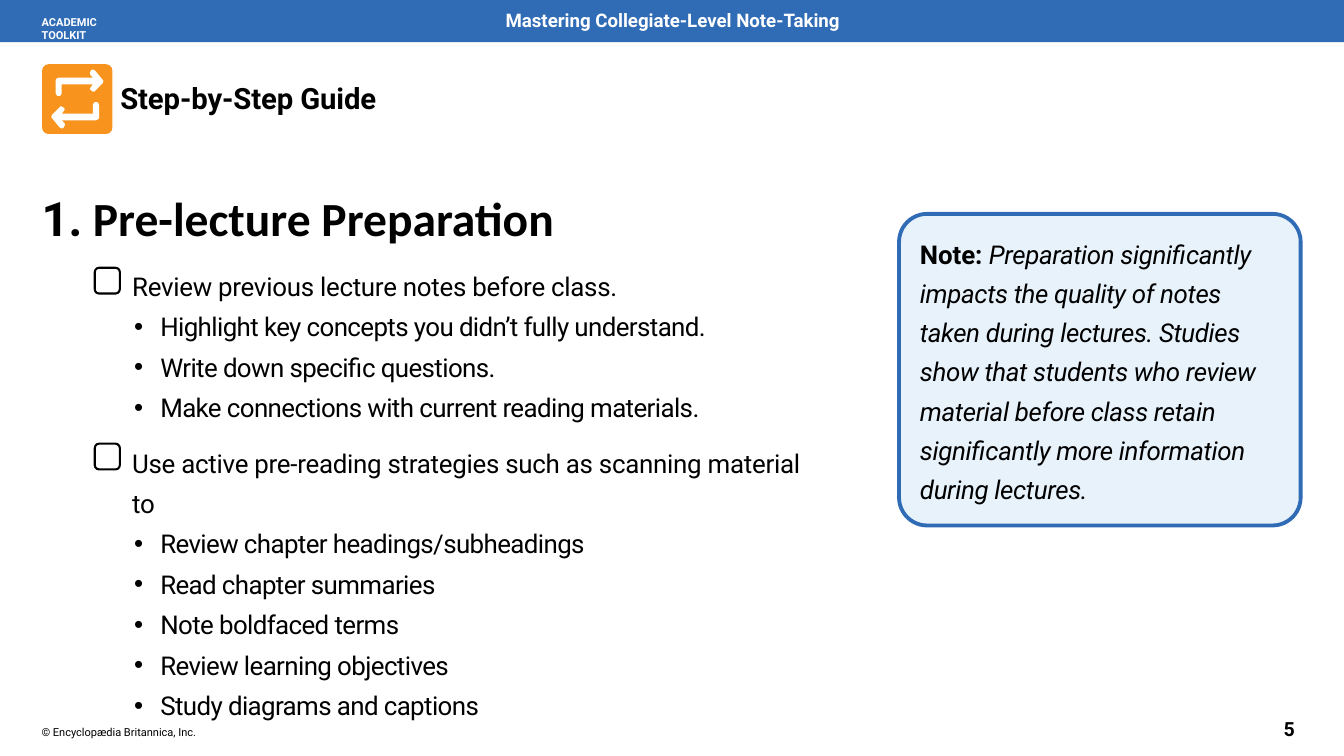
from dataclasses import dataclass

import lxml.etree
import pptx
import pptx.dml.color
import pptx.enum.shapes
import pptx.enum.text
import pptx.oxml.ns
import pptx.shapes.autoshape
import pptx.slide
import pptx.text.text
import pptx.util

Cm = pptx.util.Cm
Pt = pptx.util.Pt
Align = pptx.enum.text.PP_ALIGN
Preset = pptx.enum.shapes.MSO_SHAPE

BLUE, PALE_BLUE, ORANGE = "306CB5", "E8F2FB", "F8941D"
BLACK, WHITE = "000000", "FFFFFF"
MARGIN = 1.73
BODY_SIZE = 30.5

ICON_UNIT = Cm(2.54) / 100
RIGHT_ARROW = [
    (169, 132), (156, 116), (153, 114), (151, 114), (149, 115), (148, 117),
    (147, 119), (147, 121), (148, 123), (152, 127), (96, 127), (94, 128),
    (92, 129), (91, 131), (91, 152), (92, 155), (94, 157), (98, 157),
    (100, 155), (101, 152), (101, 138), (152, 138), (149, 142), (147, 145),
    (148, 147), (152, 150), (154, 150), (168, 136), (169, 133),
]
LEFT_ARROW = [(253 - x, 324 - y) for x, y in RIGHT_ARROW]


@dataclass
class Area:
    left: float
    top: float
    width: float
    height: float

    def lengths(self) -> list[int]:
        return [Cm(n) for n in (self.left, self.top, self.width, self.height)]


@dataclass
class Span:
    text: str
    size: float
    color: str = BLACK
    bold: bool = False
    italic: bool = False
    font: str = "Roboto"
    spacing: float = 0


@dataclass
class Line:
    spans: list[Span]
    margin: float = 0
    indent: float = 0
    line_spacing: float | int = 1.0
    before: float = 0
    bullet: str = ""
    align: Align = Align.LEFT


@dataclass
class Label:
    area: Area
    line: Line
    inset: tuple[float, float] = (0, 0.05)


@dataclass
class Panel:
    preset: Preset
    area: Area
    fill: str = ""
    border: str = ""
    weight: float = 0
    corner: float = 0


def color(value: str) -> pptx.dml.color.RGBColor:
    return pptx.dml.color.RGBColor.from_string(value)


def add_mark(paragraph: pptx.text.text._Paragraph, line: Line) -> None:
    properties = paragraph._p.get_or_add_pPr()
    properties.set("marL", str(Cm(line.margin)))
    properties.set("indent", str(Cm(line.indent)))
    qn = pptx.oxml.ns.qn
    if line.bullet:
        lxml.etree.SubElement(properties, qn("a:buChar")).set("char", line.bullet)
    else:
        lxml.etree.SubElement(properties, qn("a:buNone"))


def write_text(box: pptx.shapes.autoshape.Shape, area: Area, lines: list[Line],
               inset: tuple[float, float]) -> None:
    box.left, box.top, box.width, box.height = area.lengths()
    frame = box.text_frame
    frame.word_wrap = True
    frame.auto_size = pptx.enum.text.MSO_AUTO_SIZE.NONE
    frame.vertical_anchor = pptx.enum.text.MSO_ANCHOR.TOP
    frame.margin_left = frame.margin_right = Cm(inset[0])
    frame.margin_top, frame.margin_bottom = Cm(inset[1]), 0
    for index, line in enumerate(lines):
        paragraph = frame.add_paragraph() if index else frame.paragraphs[0]
        add_mark(paragraph, line)
        paragraph.alignment = line.align
        paragraph.line_spacing = line.line_spacing
        paragraph.space_before = Pt(line.before)
        paragraph.space_after = Pt(0)
        for span in line.spans:
            run = paragraph.add_run()
            run.text = span.text
            run.font.size, run.font.name = Pt(span.size), span.font
            run.font.bold, run.font.italic = span.bold, span.italic
            run.font.color.rgb = color(span.color)
            run._r.get_or_add_rPr().set("spc", str(round(span.spacing * 100)))


def paint(shape: pptx.shapes.autoshape.Shape, fill: str, border: str = "",
          weight: float = 0) -> None:
    shape.shadow.inherit = False
    if fill:
        shape.fill.solid()
        shape.fill.fore_color.rgb = color(fill)
    else:
        shape.fill.background()
    if border:
        shape.line.color.rgb = color(border)
        shape.line.width = Pt(weight)
    else:
        shape.line.fill.background()


def add_panel(page: pptx.slide.Slide, panel: Panel) -> None:
    shape = page.shapes.add_shape(panel.preset, *panel.area.lengths())
    if panel.corner:
        shape.adjustments[0] = panel.corner
    paint(shape, panel.fill, panel.border, panel.weight)


def add_arrows(page: pptx.slide.Slide) -> None:
    builder = page.shapes.build_freeform(*RIGHT_ARROW[0], scale=ICON_UNIT)
    builder.add_line_segments(RIGHT_ARROW[1:])
    builder.move_to(*LEFT_ARROW[0])
    builder.add_line_segments(LEFT_ARROW[1:])
    paint(builder.convert_to_shape(), WHITE)


def step(text: str) -> Line:
    return Line([Span(text, BODY_SIZE, spacing=-0.3)], 3.76, 0, 1.3, 18)


def point(text: str) -> Line:
    return Line([Span(text, BODY_SIZE, spacing=-0.7)], 4.93, -1.09, 1.3, bullet="•")


PANELS = [
    Panel(Preset.RECTANGLE, Area(0, 0, 55.85, 1.75), BLUE),
    Panel(Preset.ROUNDED_RECTANGLE, Area(37.36, 8.89, 16.69, 12.95), PALE_BLUE, BLUE, 4.5, 0.09),
    Panel(Preset.ROUNDED_RECTANGLE, Area(1.75, 2.67, 2.92, 2.9), ORANGE, corner=0.09),
] + [
    Panel(Preset.ROUNDED_RECTANGLE, Area(3.94, top, 1.04, 1.07), "", BLACK, 2.47, 0.17)
    for top in (11.13, 18.44)
]

LABELS = [
    Label(Area(17.37, 0.33, 21.16, 0.99),
          Line([Span("Mastering Collegiate-Level Note-Taking", 22, WHITE, True)], align=Align.CENTER)),
    Label(Area(MARGIN, 0.6, 4.14, 0.64), Line([Span("ACADEMIC TOOLKIT", 13, WHITE, True)])),
    Label(Area(53.34, 29.77, 0.94, 1.04), Line([Span("5", 23, bold=True)])),
    Label(Area(MARGIN, 30.12, 6.53, 0.64), Line([Span("© Encyclopædia Britannica, Inc.", 13)])),
    Label(Area(37.98, 9.47, 15.27, 11.53), Line([
        Span("Note: ", BODY_SIZE, bold=True, spacing=-0.1),
        Span("Preparation significantly impacts the quality of notes taken during lectures. "
             "Studies show that students who review material before class retain "
             "significantly more information during lectures.",
             BODY_SIZE, italic=True, spacing=-0.4),
    ], line_spacing=Pt(46)), (0.25, 0.13)),
]

TITLE = Line([Span("Step-by-Step Guide", 34.5, bold=True, spacing=-0.1)])
CHECKLIST = [
    Line([Span("1.\t", 56, bold=True, spacing=-0.2),
          Span("Pre-lecture Preparation", 56, bold=True, font="Calibri")], 2.13, -2.13),
    step("Review previous lecture notes before class."),
    point("Highlight key concepts you didn’t fully understand."),
    point("Write down specific questions."),
    point("Make connections with current reading materials."),
    step("Use active pre-reading strategies such as scanning material to"),
    point("Review chapter headings/subheadings"),
    point("Read chapter summaries"),
    point("Note boldfaced terms"),
    point("Review learning objectives"),
    point("Study diagrams and captions"),
]


def main() -> None:
    deck = pptx.Presentation()
    deck.slide_width, deck.slide_height = Cm(55.85), Cm(31.42)
    page = deck.slides.add_slide(deck.slide_layouts[1])
    for panel in PANELS:
        add_panel(page, panel)
    add_arrows(page)
    write_text(page.shapes.title, Area(5, 3.3, 10.72, 1.55), [TITLE], (0, 0.05))
    write_text(page.placeholders[1], Area(MARGIN, 7.82, 31.95, 22.15), CHECKLIST, (0, 0.03))
    for label in LABELS:
        box = page.shapes.add_textbox(*label.area.lengths())
        write_text(box, label.area, [label.line], label.inset)
    deck.save("out.pptx")


if __name__ == "__main__":
    main()
